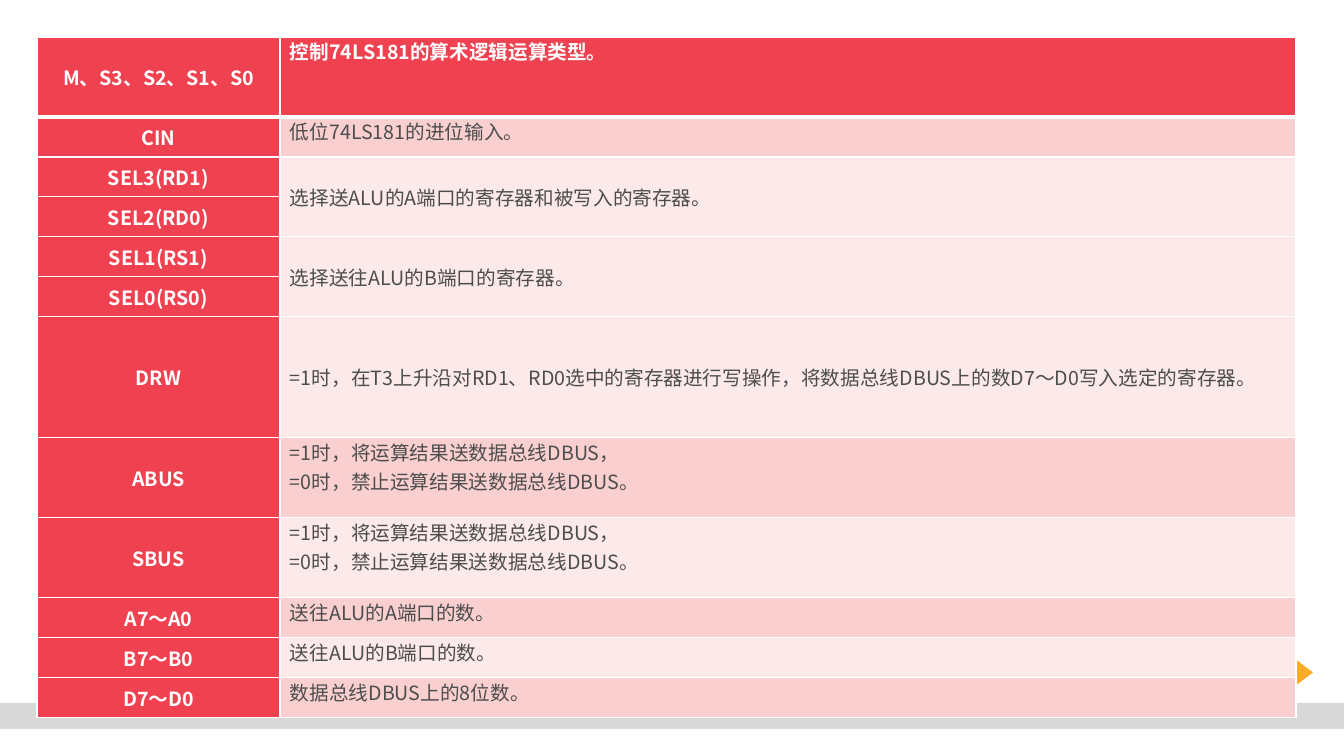
from lxml import etree
from pptx import Presentation
from pptx.dml.color import RGBColor
from pptx.enum.shapes import MSO_SHAPE
from pptx.enum.text import MSO_ANCHOR, PP_ALIGN
from pptx.oxml.ns import qn
from pptx.util import Emu, Pt

RECT = MSO_SHAPE.RECTANGLE
DIAMOND = MSO_SHAPE.FLOWCHART_DECISION
TOP, MIDDLE = MSO_ANCHOR.TOP, MSO_ANCHOR.MIDDLE
CENTER, JUSTIFY = PP_ALIGN.CENTER, PP_ALIGN.JUSTIFY

WHITE = RGBColor(0xFF, 0xFF, 0xFF)
GRAY = RGBColor(0xD9, 0xD9, 0xD9)
AMBER = RGBColor(0xFB, 0xAD, 0x24)
RED = RGBColor(0xEF, 0x41, 0x50)
PINK = RGBColor(0xF9, 0xCF, 0xD0)
PALE = RGBColor(0xFC, 0xE9, 0xE9)
INK = RGBColor(0x4D, 0x4D, 0x4D)

FONT = "Noto Sans CJK SC"
BUS = "=1时，将运算结果送数据总线DBUS，\n=0时，禁止运算结果送数据总线DBUS。"
WRITE = ("=1时，在T3上升沿对RD1、RD0选中的寄存器进行写操作，"
         "将数据总线DBUS上的数D7～D0写入选定的寄存器。")

SIGNALS = [
    ("M、S3、S2、S1、S0", 80, "控制74LS181的算术逻辑运算类型。", RED, TOP),
    ("CIN", 40, "低位74LS181的进位输入。", PINK, TOP),
    ("SEL3(RD1)", 40, "选择送ALU的A端口的寄存器和被写入的寄存器。", PALE, MIDDLE),
    ("SEL2(RD0)", 40, None, PALE, MIDDLE),
    ("SEL1(RS1)", 40, "选择送往ALU的B端口的寄存器。", PALE, MIDDLE),
    ("SEL0(RS0)", 40, None, PALE, MIDDLE),
    ("DRW", 121, WRITE, PALE, MIDDLE),
    ("ABUS", 80, BUS, PINK, TOP),
    ("SBUS", 80, BUS, PALE, TOP),
    ("A7～A0", 40, "送往ALU的A端口的数。", PINK, TOP),
    ("B7～B0", 40, "送往ALU的B端口的数。", PALE, TOP),
    ("D7～D0", 40, "数据总线DBUS上的8位数。", PINK, TOP),
]


def px(count):
    return Emu(round(count * 914400 / 100.8))


def write(frame, text, size=14, color=INK, bold=False, align=JUSTIFY):
    for at, line in enumerate(text.split("\n")):
        para = frame.paragraphs[0] if at == 0 else frame.add_paragraph()
        para.alignment = align
        run = para.add_run()
        run.text = line
        font = run.font
        font.size, font.bold, font.name = Pt(size), bold, FONT
        font.color.rgb = color
        latin = run._r.rPr.find(qn("a:latin"))
        east = etree.Element(qn("a:ea"), typeface=FONT)
        latin.addnext(east)


class Deck:
    def __init__(self, wide, high):
        self.file = Presentation()
        self.file.slide_width, self.file.slide_height = px(wide), px(high)
        self.slide = self.file.slides.add_slide(self.file.slide_layouts[6])

    def shape(self, kind, box, color):
        item = self.slide.shapes.add_shape(kind, *map(px, box))
        item.shadow.inherit = False
        item.fill.solid()
        item.fill.fore_color.rgb = color
        item.line.fill.background()

    def edge(self, cell, side, width):
        line = etree.SubElement(cell._tc.get_or_add_tcPr(), qn(f"a:ln{side}"),
                                w=str(Pt(width)))
        fill = etree.SubElement(line, qn("a:solidFill"))
        etree.SubElement(fill, qn("a:srgbClr"), val=str(WHITE))

    def cell(self, cell, color, anchor, above, below):
        for side, width in zip("LRTB", (1, 1, above, below)):
            self.edge(cell, side, width)
        cell.fill.solid()
        cell.fill.fore_color.rgb = color
        cell.vertical_anchor = anchor
        cell.margin_left = cell.margin_right = px(10)
        cell.margin_top = cell.margin_bottom = 0

    def table(self, left, top, cols, rows):
        high = sum(row[1] for row in rows)
        grid = self.slide.shapes.add_table(
            len(rows), len(cols), px(left), px(top), px(sum(cols)), px(high)).table
        for col, wide in zip(grid.columns, cols):
            col.width = px(wide)
        for at, (label, tall, text, color, anchor) in enumerate(rows):
            grid.rows[at].height = px(tall)
            name, note = grid.cell(at, 0), grid.cell(at, 1)
            above, below = 3 if at == 1 else 1, 3 if at == 0 else 1
            self.cell(name, RED, MIDDLE, above, below)
            self.cell(note, color, anchor, above, below)
            write(name.text_frame, label, color=WHITE, bold=True, align=CENTER)
            if text is None:
                grid.cell(at - 1, 1).merge(note)
            else:
                head = at == 0
                write(note.text_frame, text, color=WHITE if head else INK, bold=head)


def main():
    deck = Deck(1344, 756)
    deck.shape(RECT, (0, 703, 1344, 26), GRAY)
    deck.shape(DIAMOND, (1227, 640, 86, 65), AMBER)
    deck.table(37, 37, (243, 1016), SIGNALS)
    deck.file.save("out.pptx")


if __name__ == "__main__":
    main()
